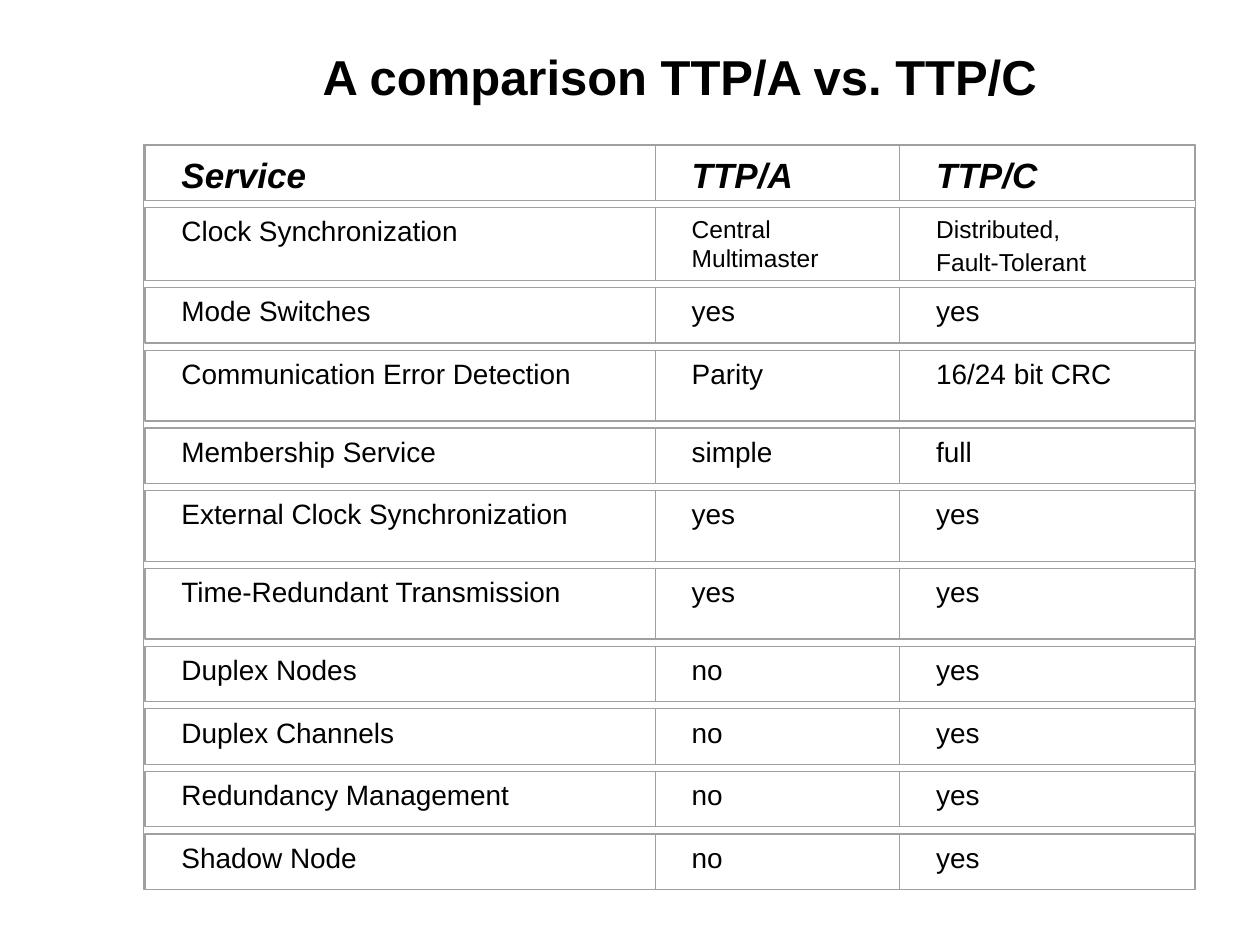
from pptx import Presentation
from pptx.dml.color import RGBColor
from pptx.enum.shapes import MSO_SHAPE
from pptx.enum.text import MSO_ANCHOR, PP_ALIGN
from pptx.util import Inches, Pt

TITLE = "A comparison TTP/A vs. TTP/C"
ROWS = [
    (0.44, ["Service", "TTP/A", "TTP/C"]),
    (0.58, ["Clock Synchronization", "Central\nMultimaster", "Distributed,\nFault-Tolerant"]),
    (0.44, ["Mode Switches", "yes", "yes"]),
    (0.56, ["Communication Error Detection", "Parity", "16/24 bit CRC"]),
    (0.44, ["Membership Service", "simple", "full"]),
    (0.56, ["External Clock Synchronization", "yes", "yes"]),
    (0.56, ["Time-Redundant Transmission", "yes", "yes"]),
    (0.44, ["Duplex Nodes", "no", "yes"]),
    (0.44, ["Duplex Channels", "no", "yes"]),
    (0.44, ["Redundancy Management", "no", "yes"]),
    (0.44, ["Shadow Node", "no", "yes"]),
]
COLUMN_WIDTHS = [4.05, 1.94, 2.34]
LEFT, TOP, HEIGHT = 1.15, 1.15, 5.91
ROW_GAP = (HEIGHT - sum(height for height, _ in ROWS)) / (len(ROWS) - 1)
BLACK, GREY = "000000", "A0A0A0"


def color(value):
    return RGBColor.from_string(value)


def set_font(para, size, bold=False, italic=False):
    font = para.font
    font.name, font.size = "Arial", Pt(size)
    font.bold, font.italic = bold, italic
    font.color.rgb = color(BLACK)


def set_margins(frame, left, top, right, bottom):
    frame.margin_left, frame.margin_top = Inches(left), Inches(top)
    frame.margin_right, frame.margin_bottom = Inches(right), Inches(bottom)


def add_outline(page, left, top, width, height, line_width):
    box = page.shapes.add_shape(
        MSO_SHAPE.RECTANGLE, Inches(left), Inches(top), Inches(width), Inches(height))
    box.shadow.inherit = False
    box.fill.background()
    box.line.color.rgb = color(GREY)
    box.line.width = Pt(line_width)
    return box


def add_cell(page, left, top, width, height, text, header):
    frame = add_outline(page, left, top, width, height, 0).text_frame
    frame.word_wrap = True
    frame.vertical_anchor = MSO_ANCHOR.TOP
    set_margins(frame, 0.29, 0.07 if header else 0.05, 0.08, 0)
    frame.text = text
    size = 20 if header else 14 if "\n" in text else 16
    for para in frame.paragraphs:
        para.alignment = PP_ALIGN.LEFT
        set_font(para, size, header, header)
    if text.startswith("Distributed"):
        frame.paragraphs[1].space_before = Pt(2.5)


def add_title(page):
    title = page.shapes.title
    title.left, title.top = Inches(1.85), Inches(0.28)
    title.width, title.height = Inches(7.09), Inches(0.57)
    frame = title.text_frame
    frame.text = TITLE
    frame.word_wrap = True
    frame.vertical_anchor = MSO_ANCHOR.TOP
    set_margins(frame, 0.1, 0.09, 0.1, 0)
    para = frame.paragraphs[0]
    para.alignment = PP_ALIGN.CENTER
    set_font(para, 28, bold=True)


def main():
    deck = Presentation()
    deck.slide_width, deck.slide_height = Inches(10), Inches(7.5)
    page = deck.slides.add_slide(deck.slide_layouts[5])
    add_title(page)

    top = TOP
    for index, (height, texts) in enumerate(ROWS):
        left = LEFT
        for width, text in zip(COLUMN_WIDTHS, texts):
            add_cell(page, left, top, width, height, text, index == 0)
            left += width
        top += height + ROW_GAP
    add_outline(page, LEFT - 0.01, TOP, sum(COLUMN_WIDTHS) + 0.02, HEIGHT, 0.75)

    deck.save("out.pptx")


if __name__ == "__main__":
    main()
